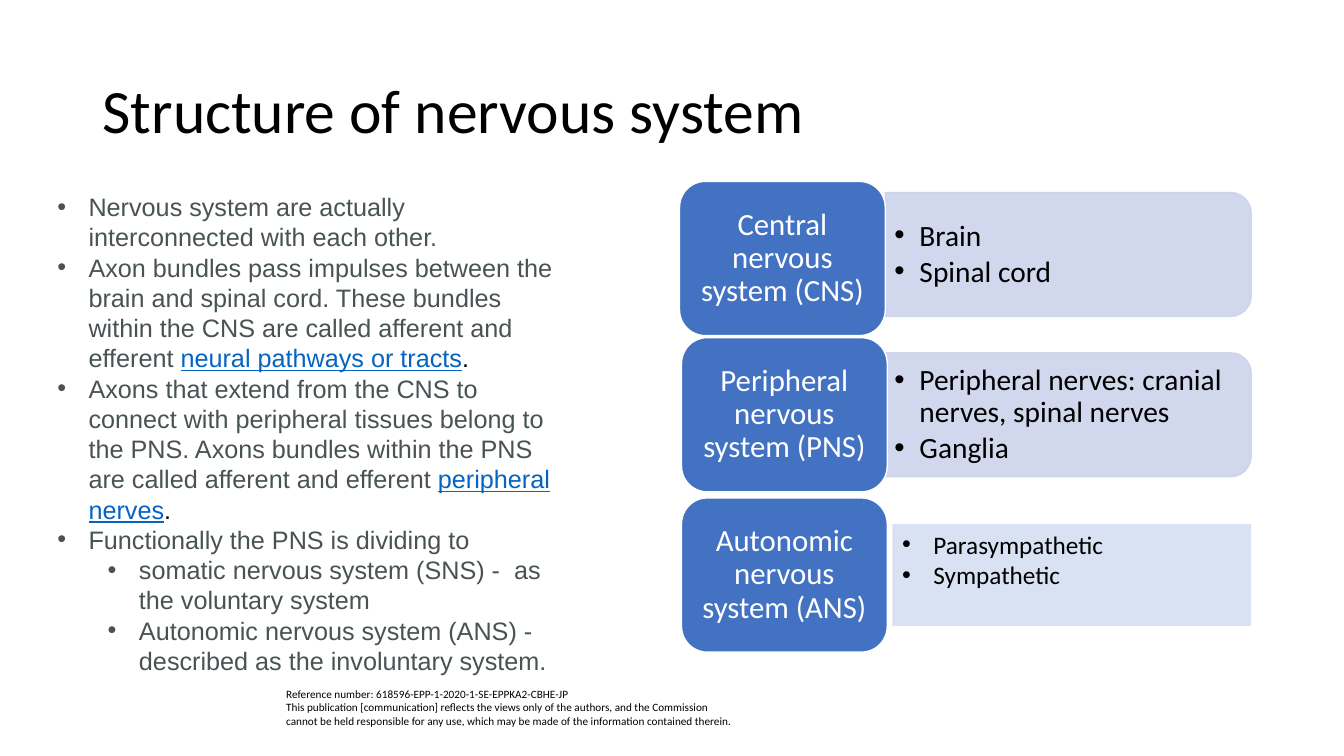
from lxml.etree import SubElement
from pptx import Presentation
from pptx.dml.color import RGBColor
from pptx.enum.shapes import MSO_SHAPE
from pptx.enum.text import MSO_ANCHOR, PP_ALIGN
from pptx.oxml.ns import qn
from pptx.util import Emu, Pt

# Content
TITLE = "Structure of nervous system"
LINK, STOP = "0563C1", "000000"
BODY_COLOR = "495354"
BODY = [  # (level, [(text, colour)])
    (0, [("Nervous system are actually interconnected with each other.", BODY_COLOR)]),
    (0, [("Axon bundles pass impulses between the brain and spinal cord. These bundles "
          "within the CNS are called afferent and efferent ", BODY_COLOR),
         ("neural pathways or tracts", LINK), (".", STOP)]),
    (0, [("Axons that extend from the CNS to connect with peripheral tissues belong to "
          "the PNS. Axons bundles within the PNS are called afferent and efferent ", BODY_COLOR),
         ("peripheral nerves", LINK), (".", STOP)]),
    (0, [("Functionally the PNS is dividing to", BODY_COLOR)]),
    (1, [("somatic nervous system (SNS) -  as the voluntary system", BODY_COLOR)]),
    (1, [("Autonomic nervous system (ANS) - described as the involuntary system.", BODY_COLOR)]),
]
SYSTEMS = [  # (name, left, top) of each blue block
    ("Central nervous system (CNS)", 674, 180),
    ("Peripheral nervous system (PNS)", 676, 335),
    ("Autonomic nervous system (ANS)", 676, 494),
]
DETAILS = [  # (top of the pale panel, its bullets)
    (191, ["Brain", "Spinal cord"]),
    (350, ["Peripheral nerves: cranial nerves, spinal nerves", "Ganglia"]),
]
AUTONOMIC_PARTS = ["Parasympathetic", "Sympathetic"]
REFERENCE = [
    "Reference number: 618596-EPP-1-2020-1-SE-EPPKA2-CBHE-JP",
    "This publication [communication] reflects the views only of the authors, and the "
    "Commission cannot be held responsible for any use, which may be made of the "
    "information contained therein.",
]

# Layout in px, 100 to the inch
BLOCK_WIDTH, BLOCK_HEIGHT = 204, 153
PANEL_LEFT, PANEL_WIDTH, PANEL_HEIGHT = 878, 363, 123
PANEL_TEXT_WIDTH, PANEL_TEXT_HEIGHT = 357, 111
CORNER = 0.167


def px(value):
    return Emu(value * 9144)


def color(value):
    return RGBColor.from_string(value)


def prepare(shape, anchor=MSO_ANCHOR.TOP, side=10, edge=5):
    frame = shape.text_frame
    frame.word_wrap = True
    frame.vertical_anchor = anchor
    frame.margin_left = frame.margin_right = px(side)
    frame.margin_top = frame.margin_bottom = px(edge)
    return frame


def add_text(left, top, width, height, **options):
    box = slide.shapes.add_textbox(px(left), px(top), px(width), px(height))
    return prepare(box, **options)


def add_shape(kind, left, top, width, height, fill, line=None):
    shape = slide.shapes.add_shape(kind, px(left), px(top), px(width), px(height))
    shape.shadow.inherit = False
    shape.fill.solid()
    shape.fill.fore_color.rgb = color(fill)
    if line:
        shape.line.color.rgb = color(line)
        shape.line.width = Pt(1)
    else:
        shape.line.fill.background()
    return shape


def set_font(paragraph, size, rgb, name="Calibri"):
    paragraph.font.size = Pt(size)
    paragraph.font.name = name
    paragraph.font.color.rgb = color(rgb)


def next_paragraph(frame, index):
    return frame.add_paragraph() if index else frame.paragraphs[0]


def add_bullet(paragraph, rgb, indent, hanging):
    properties = paragraph._p.get_or_add_pPr()
    properties.set("marL", str(px(indent)))
    properties.set("indent", str(-px(hanging)))
    bullet_color = SubElement(properties, qn("a:buClr"))
    SubElement(bullet_color, qn("a:srgbClr"), val=rgb)
    SubElement(properties, qn("a:buFont"), typeface="Arial")
    SubElement(properties, qn("a:buChar"), char="•")


def add_bullet_list(frame, items, size, indent, line_spacing=1.0, gap=0):
    for index, item in enumerate(items):
        paragraph = next_paragraph(frame, index)
        paragraph.text = item
        add_bullet(paragraph, "000000", indent, indent)
        set_font(paragraph, size, "000000")
        paragraph.line_spacing = line_spacing
        if index and gap:
            paragraph.space_before = Pt(gap)


presentation = Presentation()
presentation.slide_width, presentation.slide_height = px(1333), px(750)
slide = presentation.slides.add_slide(presentation.slide_layouts[6])

# Reference note
note = add_text(274, 677, 464, 50).paragraphs[0]
for index, line in enumerate(REFERENCE):
    if index:
        note.add_line_break()
    note.add_run().text = line
set_font(note, 8, "000000")

# Title
title = add_text(92, 40, 1150, 145, anchor=MSO_ANCHOR.MIDDLE).paragraphs[0]
title.text = TITLE
title.line_spacing = 0.9
set_font(title, 44, "000000")

# Pale panels: drawn upright, then turned a quarter so the round corners face right
for top, items in DETAILS:
    shift = (PANEL_WIDTH - PANEL_HEIGHT) // 2
    panel = add_shape(MSO_SHAPE.ROUND_2_SAME_RECTANGLE, PANEL_LEFT + shift, top - shift,
                      PANEL_HEIGHT, PANEL_WIDTH, "CCD3EA", "CCD3EA")
    panel.rotation = 90
    panel.adjustments[0], panel.adjustments[1] = CORNER, 0
    for tint in panel._element.spPr.iter(qn("a:srgbClr")):
        SubElement(tint, qn("a:alpha"), val="90000")
    inset = (PANEL_HEIGHT - PANEL_TEXT_HEIGHT) // 2
    frame = add_text(PANEL_LEFT, top + inset, PANEL_TEXT_WIDTH, PANEL_TEXT_HEIGHT,
                     anchor=MSO_ANCHOR.MIDDLE, side=9, edge=4)
    add_bullet_list(frame, items, 21, 25, 0.9, 3.1)

# Autonomic panel
panel = add_shape(MSO_SHAPE.RECTANGLE, 885, 520, 356, 101, "D8E2F3")
frame = prepare(panel)
add_bullet_list(frame, AUTONOMIC_PARTS, 18, 31)
for paragraph in frame.paragraphs:
    paragraph.alignment = PP_ALIGN.LEFT

# Blue system blocks
for name, left, top in SYSTEMS:
    block = add_shape(MSO_SHAPE.ROUNDED_RECTANGLE, left, top, BLOCK_WIDTH, BLOCK_HEIGHT,
                      "4372C3", "FFFFFF")
    block.adjustments[0] = CORNER
    label = prepare(block, MSO_ANCHOR.MIDDLE, side=9).paragraphs[0]
    label.text = name
    label.alignment = PP_ALIGN.CENTER
    label.line_spacing = 0.9
    set_font(label, 22, "FFFFFF")

# Body text
body = add_text(47, 185, 515, 495)
for index, (level, parts) in enumerate(BODY):
    paragraph = next_paragraph(body, index)
    paragraph.level = level
    add_bullet(paragraph, BODY_COLOR, 31 + 50 * level, 31)
    set_font(paragraph, 18, BODY_COLOR, "Arial")
    for text, rgb in parts:
        run = paragraph.add_run()
        run.text = text
        if rgb != BODY_COLOR:
            run.font.color.rgb = color(rgb)
        if rgb == LINK:
            run.font.underline = True

presentation.save("out.pptx")
